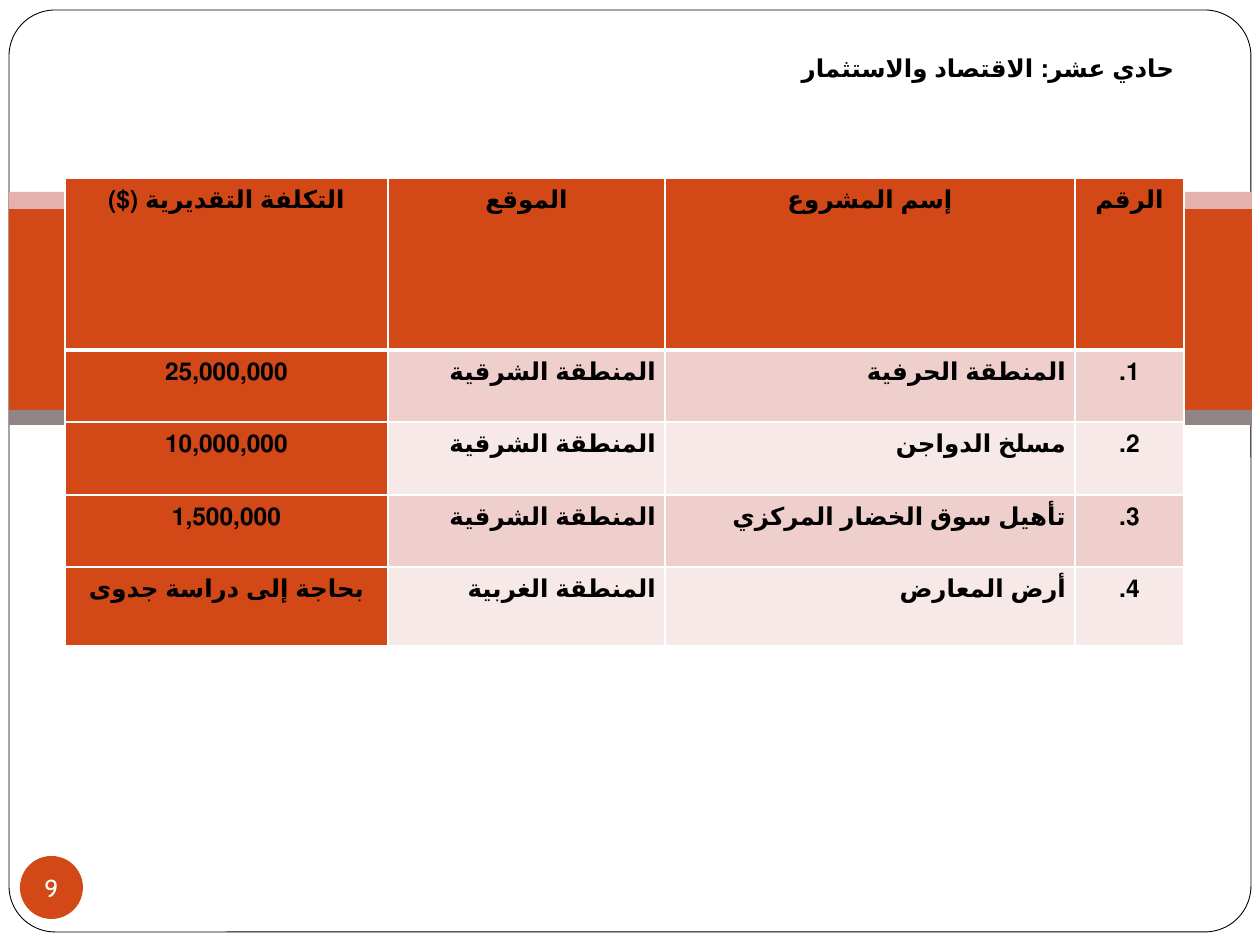
from dataclasses import dataclass

from lxml.etree import SubElement
from pptx import Presentation
from pptx.dml.color import RGBColor
from pptx.enum.shapes import MSO_SHAPE
from pptx.enum.text import MSO_ANCHOR, MSO_AUTO_SIZE, PP_ALIGN
from pptx.oxml.ns import qn
from pptx.util import Emu, Pt


@dataclass(frozen=True)
class Theme:
    accent: str = "D34817"
    accent_light: str = "E6B1AC"
    accent_grey: str = "918485"
    row_tints: tuple = ("EFCFCC", "F7E9E8")
    white: str = "FFFFFF"
    black: str = "000000"
    text_font: str = "Comic Neue"
    arabic_font: str = "Helvetica"
    number_font: str = "Cabin"
    text_size: int = 14


HEADER = ("التكلفة التقديرية ($)", "الموقع", "إسم المشروع", "الرقم")
PROJECTS = (
    ("25,000,000", "المنطقة الشرقية", "المنطقة الحرفية", "1."),
    ("10,000,000", "المنطقة الشرقية", "مسلخ الدواجن", "2."),
    ("1,500,000", "المنطقة الشرقية", "تأهيل سوق الخضار المركزي", "3."),
    ("بحاجة إلى دراسة جدوى", "المنطقة الغربية", "أرض المعارض", "4."),
)
COLUMN_WIDTHS = (323, 277, 410, 109)
ROW_HEIGHTS = (172, 72, 73, 72, 79)


def px(length):
    return Emu(round(length * 914400 / 126))


def rgb(value):
    return RGBColor.from_string(value)


class SlideBuilder:
    """Draws themed elements on the current slide."""

    def __init__(self, slide, theme):
        self.slide = slide
        self.theme = theme

    def format_runs(self, paragraph, font, color, bold):
        for run in paragraph.runs:
            run.font.name = font
            run.font.size = Pt(self.theme.text_size)
            run.font.bold = bold
            run.font.color.rgb = rgb(color)

    def arabic(self, paragraph, alignment):
        paragraph.alignment = alignment
        paragraph._p.get_or_add_pPr().set("rtl", "1")
        self.format_runs(paragraph, self.theme.text_font, self.theme.black, True)
        for run in paragraph.runs:
            properties = run._r.get_or_add_rPr()
            properties.set("lang", "ar-SA")
            SubElement(properties, qn("a:cs"), typeface=self.theme.arabic_font)

    def shape(self, kind, left, top, width, height, fill, line=None):
        shape = self.slide.shapes.add_shape(
            kind, px(left), px(top), px(width), px(height))
        shape.shadow.inherit = False
        shape.fill.solid()
        shape.fill.fore_color.rgb = rgb(fill)
        if line:
            shape.line.color.rgb = rgb(line)
            shape.line.width = Pt(0.5)
        else:
            shape.line.fill.background()
        return shape

    def title(self, text, left, top, width, height):
        title = self.slide.shapes.title
        title.left, title.top = px(left), px(top)
        title.width, title.height = px(width), px(height)
        frame = title.text_frame
        frame.text = text
        frame.word_wrap = True
        frame.auto_size = MSO_AUTO_SIZE.NONE
        frame.vertical_anchor = MSO_ANCHOR.TOP
        self.arabic(frame.paragraphs[0], PP_ALIGN.RIGHT)
        title.element.getparent().append(title.element)

    def border(self, cell, side, width):
        properties = cell._tc.get_or_add_tcPr()
        line = SubElement(properties, qn(f"a:ln{side}"), w=str(Pt(width)))
        fill = SubElement(line, qn("a:solidFill"))
        SubElement(fill, qn("a:srgbClr"), val=self.theme.white)

    def cell(self, cell, text, row, column):
        is_header = row == 0
        for side in "LRTB":
            heavy = (is_header and side == "B") or (row == 1 and side == "T")
            self.border(cell, side, 3 if heavy else 1)
        cell.fill.solid()
        accented = is_header or column == 0
        tint = self.theme.row_tints[(row - 1) % 2]
        cell.fill.fore_color.rgb = rgb(self.theme.accent if accented else tint)
        cell.margin_left = cell.margin_right = px(9)
        cell.margin_top = cell.margin_bottom = 0
        cell.text_frame.text = text
        paragraph = cell.text_frame.paragraphs[0]
        paragraph.line_spacing = 1.5
        centred = is_header or column in (0, 3)
        self.arabic(paragraph, PP_ALIGN.CENTER if centred else PP_ALIGN.RIGHT)

    def table(self, rows, left, top, widths, heights):
        table = self.slide.shapes.add_table(
            len(rows), len(widths), px(left), px(top),
            px(sum(widths)), px(sum(heights))).table
        table.first_row = table.horz_banding = False
        for column, width in zip(table.columns, widths):
            column.width = px(width)
        for row, height in zip(table.rows, heights):
            row.height = px(height)
        for row, texts in enumerate(rows):
            for column, text in enumerate(texts):
                self.cell(table.cell(row, column), text, row, column)

    def page_number(self, text, left, top, diameter):
        circle = self.shape(MSO_SHAPE.OVAL, left, top, diameter, diameter,
                            self.theme.accent)
        frame = circle.text_frame
        frame.margin_left = frame.margin_right = 0
        frame.margin_top = frame.margin_bottom = 0
        frame.word_wrap = False
        frame.vertical_anchor = MSO_ANCHOR.MIDDLE
        frame.text = text
        paragraph = frame.paragraphs[0]
        paragraph.alignment = PP_ALIGN.CENTER
        self.format_runs(paragraph, self.theme.number_font,
                         self.theme.white, False)


def main():
    theme = Theme()
    presentation = Presentation()
    presentation.slide_width, presentation.slide_height = px(1260), px(945)
    slide = presentation.slides.add_slide(presentation.slide_layouts[5])
    builder = SlideBuilder(slide, theme)

    frame = builder.shape(MSO_SHAPE.ROUNDED_RECTANGLE, 9, 10, 1242, 922,
                          theme.white, theme.black)
    frame.adjustments[0] = 0.05
    for top, height, color in ((199, 211, theme.accent),
                               (192, 17, theme.accent_light),
                               (410, 15, theme.accent_grey)):
        builder.shape(MSO_SHAPE.RECTANGLE, 9, top, 1243, height, color)
    builder.table((HEADER, *PROJECTS), 65, 178, COLUMN_WIDTHS, ROW_HEIGHTS)
    builder.title("حادي عشر: الاقتصاد والاستثمار", 746, 47, 441, 81)
    builder.page_number("9", 20, 856, 63)
    presentation.save("out.pptx")


if __name__ == "__main__":
    main()
